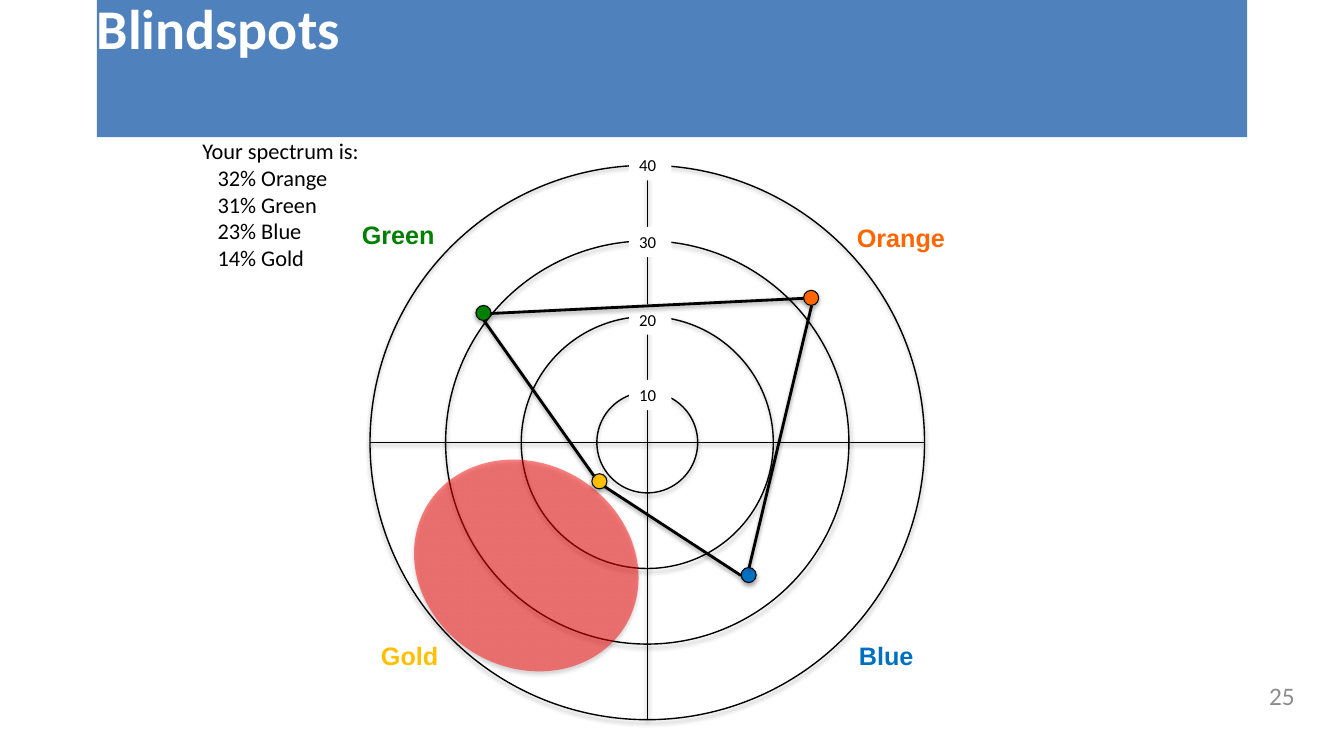
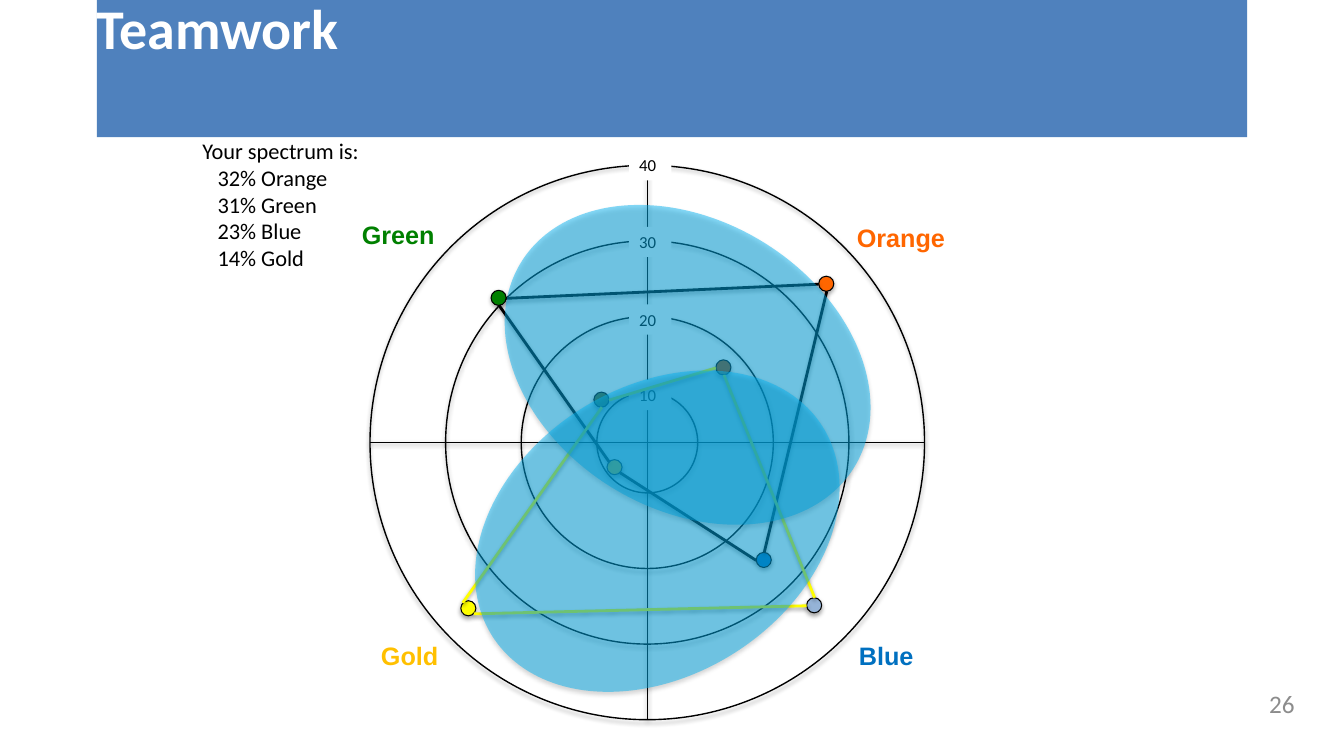
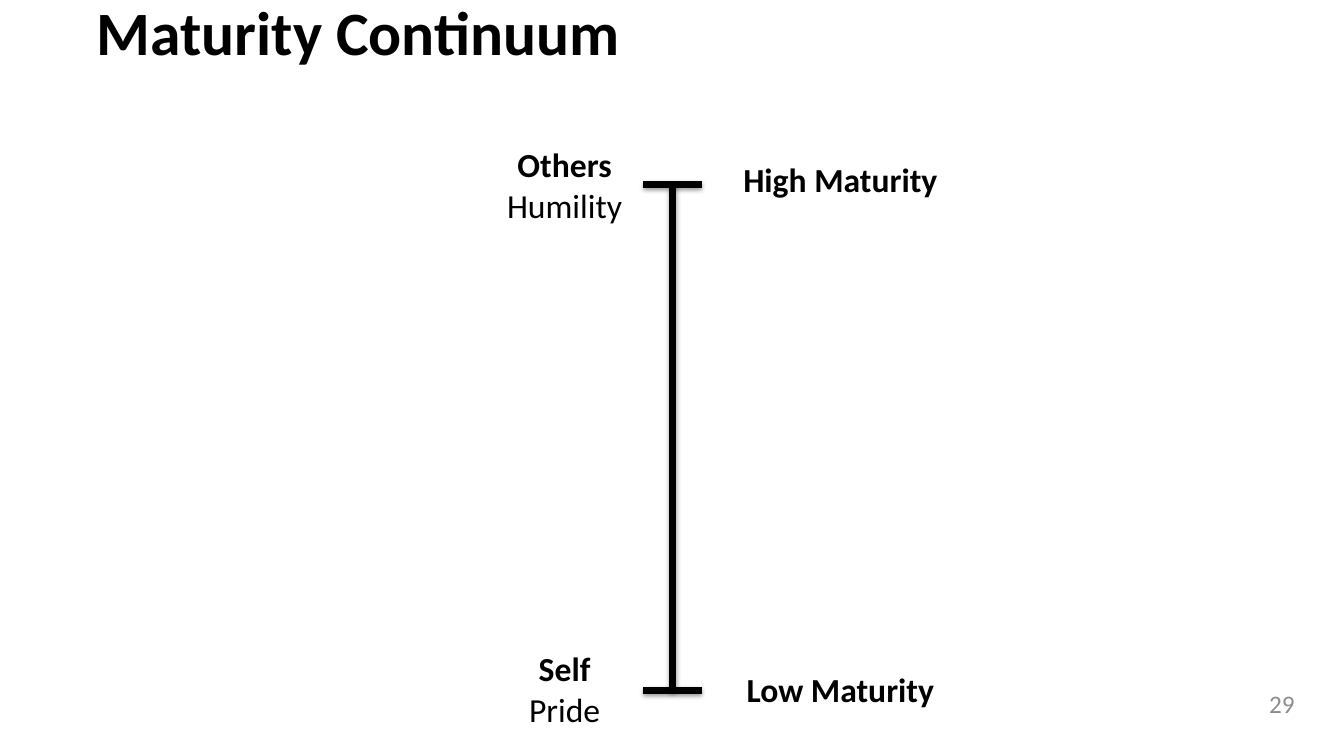
import lxml.etree
import pptx
import pptx.dml.color
import pptx.enum.shapes
import pptx.enum.text
import pptx.oxml.ns
import pptx.util

# Shared measures: 100 px to the inch
EMU_PER_PX = 9144
SLIDE_SIZE = (1333, 750)
TITLE_LEFT, TITLE_TOP, TITLE_WIDTH = 96, -6, 1141
NUMBER_LEFT, NUMBER_WIDTH, NUMBER_HEIGHT = 977, 307, 38
DOT = 15

# Shared colours
BLACK, WHITE, BAND, GREY = "000000", "FFFFFF", "4F81BD", "8C8C8C"
GREEN, ORANGE, BLUE, GOLD = "008000", "FF6600", "0070C0", "FFC000"
YELLOW, RED, SKY = "FFFF00", "FF0000", "00B0F0"

# Content of the spectrum slides
SPECTRUM = ["Your spectrum is:", "32% Orange", "31% Green", "23% Blue", "14% Gold"]
QUADRANTS = [
    ("Green", GREEN, (349, 213, 99, 61)),
    ("Blue", BLUE, (842, 630, 75, 40)),
    ("Orange", ORANGE, (840, 216, 134, 40)),
    ("Gold", GOLD, (368, 630, 109, 40)),
]
CENTRE_X, CENTRE_Y = 642, 439
RINGS = [("10", 50, 377), ("20", 125, 302), ("30", 200, 225), ("40", 275, 149)]

# Dots are (left, top, colour); ovals are (box, rotation, colour)
SPECTRUM_SLIDES = [
    {
        "title": "Blindspots", "number": "25", "number_top": 675,
        "profiles": [
            {"line": BLACK, "green": (472, 303, GREEN), "orange": (797, 288, ORANGE),
             "blue": (735, 563, BLUE), "gold": (587, 470, GOLD)},
        ],
        "ovals": [((407, 460, 230, 202), 31.6, RED)],
    },
    {
        "title": "Teamwork", "number": "26", "number_top": 683,
        "profiles": [
            {"line": BLACK, "green": (487, 288, GREEN), "orange": (812, 274, ORANGE),
             "blue": (750, 548, BLUE), "gold": (602, 456, GOLD)},
            {"line": YELLOW, "green": (589, 389, "4F6228"), "orange": (710, 357, "984807"),
             "blue": (800, 593, "95B3D7"), "gold": (457, 596, YELLOW)},
        ],
        "ovals": [((488, 219, 388, 286), 31.6, SKY), ((458, 384, 388, 286), 327.5, SKY)],
    },
]

# Content of the continuum slide
AXIS_X, AXIS_TOP, AXIS_BOTTOM, CAP_HALF = 667, 183, 685, 29
CONTINUUM_LABELS = [
    (["Self", "Pride"], (483, 633, 154, 100)),
    (["High Maturity"], (717, 148, 233, 44)),
    (["Others", "Humility"], (483, 133, 154, 100)),
    (["Low Maturity"], (717, 654, 233, 44)),
]

ALIGN = pptx.enum.text.PP_ALIGN
SHAPES = pptx.enum.shapes.MSO_SHAPE
qn = pptx.oxml.ns.qn


def px(length):
    return pptx.util.Emu(length * EMU_PER_PX)


def rgb(colour):
    return pptx.dml.color.RGBColor.from_string(colour)


def write_text(frame, lines, size, colour=BLACK, font="Calibri", bold_lines=0,
               align=ALIGN.LEFT, indent=0, inset=(10, 5)):
    """Write one paragraph a line; indent applies after the first line."""
    frame.word_wrap = True
    frame.auto_size = pptx.enum.text.MSO_AUTO_SIZE.NONE
    frame.vertical_anchor = pptx.enum.text.MSO_ANCHOR.TOP
    frame.margin_left = frame.margin_right = px(inset[0])
    frame.margin_top = frame.margin_bottom = px(inset[1])
    for index, line in enumerate(lines):
        paragraph = frame.paragraphs[0] if index == 0 else frame.add_paragraph()
        paragraph.alignment = align
        if index and indent:
            paragraph._p.get_or_add_pPr().set("marL", str(px(indent)))
        run = paragraph.add_run()
        run.text = line
        run.font.name = font
        run.font.size = pptx.util.Pt(size)
        run.font.bold = index < bold_lines
        run.font.color.rgb = rgb(colour)


def add_text(slide, box, lines, size, **text_format):
    shape = slide.shapes.add_textbox(*map(px, box))
    write_text(shape.text_frame, lines, size, **text_format)


def cast_shadow(shape, distance, opacity):
    properties = shape._element.spPr
    effects = properties.find(qn("a:effectLst"))
    if effects is None:
        effects = lxml.etree.SubElement(properties, qn("a:effectLst"))
    shadow = lxml.etree.SubElement(effects, qn("a:outerShdw"), blurRad="40000",
                                   dist=str(distance), dir="5400000", rotWithShape="0")
    tone = lxml.etree.SubElement(shadow, qn("a:srgbClr"), val=BLACK)
    lxml.etree.SubElement(tone, qn("a:alpha"), val=str(opacity * 1000))


def add_shape(slide, kind, box, fill=None, line_width=0, opacity=100, shadow=True):
    shape = slide.shapes.add_shape(kind, *map(px, box))
    shape.shadow.inherit = False
    if fill:
        shape.fill.solid()
        shape.fill.fore_color.rgb = rgb(fill)
        if opacity < 100:
            tone = shape._element.spPr.find(qn("a:solidFill"))[0]
            lxml.etree.SubElement(tone, qn("a:alpha"), val=str(opacity * 1000))
    else:
        shape.fill.background()
    if line_width:
        shape.line.color.rgb = rgb(BLACK)
        shape.line.width = pptx.util.Pt(line_width)
    else:
        shape.line.fill.background()
    if shadow:
        cast_shadow(shape, 23000, 35)
    return shape


def add_line(slide, start, end, width, colour=BLACK):
    connector = slide.shapes.add_connector(
        pptx.enum.shapes.MSO_CONNECTOR.STRAIGHT, *map(px, (*start, *end)))
    connector.line.color.rgb = rgb(colour)
    connector.line.width = pptx.util.Pt(width)
    cast_shadow(connector, 20000, 38)


def add_slide(presentation, title, number, number_top, height, size, colour, band=None):
    """Add a slide with its title and page number."""
    slide = presentation.slides.add_slide(presentation.slide_layouts[5])
    shape = slide.shapes.title
    shape.left, shape.top, shape.width, shape.height = map(
        px, (TITLE_LEFT, TITLE_TOP, TITLE_WIDTH, height))
    if band:
        shape.fill.solid()
        shape.fill.fore_color.rgb = rgb(band)
    write_text(shape.text_frame, [title], size, colour=colour, bold_lines=1, inset=(0, 0))
    add_text(slide, (NUMBER_LEFT, number_top, NUMBER_WIDTH, NUMBER_HEIGHT), [number], 18,
             colour=GREY, align=ALIGN.RIGHT, inset=(0, 0))
    return slide


def add_target(slide):
    """Draw the quadrant names, rings, axes and ring values."""
    for name, colour, box in QUADRANTS:
        add_text(slide, box, [name], 18, colour=colour, font="Arial", bold_lines=1)
    for _, radius, _ in RINGS:
        box = (CENTRE_X - radius, CENTRE_Y - radius, 2 * radius, 2 * radius)
        add_shape(slide, SHAPES.OVAL, box, line_width=1)
    reach = RINGS[-1][1]
    for dx, dy in ((0, reach), (reach, 0)):
        add_line(slide, (CENTRE_X - dx, CENTRE_Y - dy), (CENTRE_X + dx, CENTRE_Y + dy), 1)
    for value, _, top in RINGS:
        shape = add_shape(slide, SHAPES.RECTANGLE, (CENTRE_X - 18, top, 42, 30),
                          fill=WHITE, shadow=False)
        write_text(shape.text_frame, [value], 12)


def add_profile(slide, profile):
    """Draw four dots and the lines that join their edges."""
    for name in ("green", "orange", "blue", "gold"):
        left, top, colour = profile[name]
        add_shape(slide, SHAPES.OVAL, (left, top, DOT, DOT), fill=colour, line_width=0.75)

    def edge(name, dx, dy):
        left, top, _ = profile[name]
        return left + dx, top + dy

    middle = DOT // 2 + 1
    joins = [
        (edge("green", DOT, middle), edge("orange", 0, middle)),
        (edge("green", middle, DOT), edge("gold", 2, 2)),
        (edge("gold", DOT - 2, DOT - 2), edge("blue", 0, middle)),
        (edge("orange", middle, DOT), edge("blue", middle, 0)),
    ]
    for start, end in joins:
        add_line(slide, start, end, 2, profile["line"])


def build_spectrum(presentation, content):
    slide = add_slide(presentation, content["title"], content["number"],
                      content["number_top"], 142, 40, WHITE, BAND)
    add_text(slide, (191, 131, 192, 145), SPECTRUM, 16, indent=15)
    add_target(slide)
    for profile in content["profiles"]:
        add_profile(slide, profile)
    for box, rotation, colour in content["ovals"]:
        oval = add_shape(slide, SHAPES.OVAL, box, fill=colour, opacity=48)
        oval.rotation = rotation


def build_continuum(presentation):
    slide = add_slide(presentation, "Maturity Continuum", "29", 683, 74, 44, BLACK)
    add_line(slide, (AXIS_X, AXIS_TOP), (AXIS_X, AXIS_BOTTOM), 5)
    for y in (AXIS_BOTTOM, AXIS_TOP):
        add_line(slide, (AXIS_X - CAP_HALF, y), (AXIS_X + CAP_HALF, y), 5)
    for lines, box in CONTINUUM_LABELS:
        add_text(slide, box, lines, 24, bold_lines=1, align=ALIGN.CENTER, inset=(10, 10))


def main():
    presentation = pptx.Presentation()
    presentation.slide_width, presentation.slide_height = map(px, SLIDE_SIZE)
    for content in SPECTRUM_SLIDES:
        build_spectrum(presentation, content)
    build_continuum(presentation)
    presentation.save("out.pptx")


if __name__ == "__main__":
    main()
